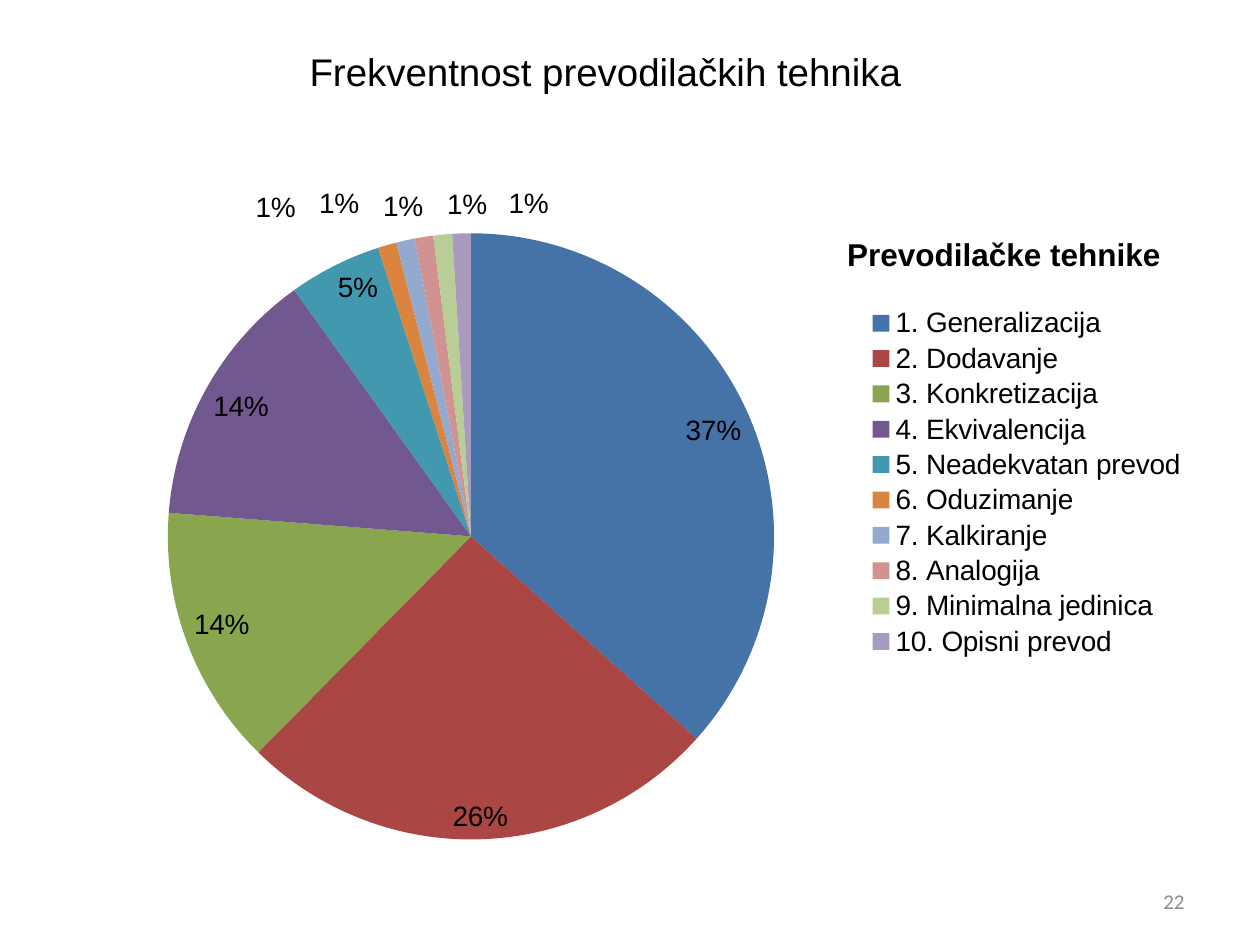
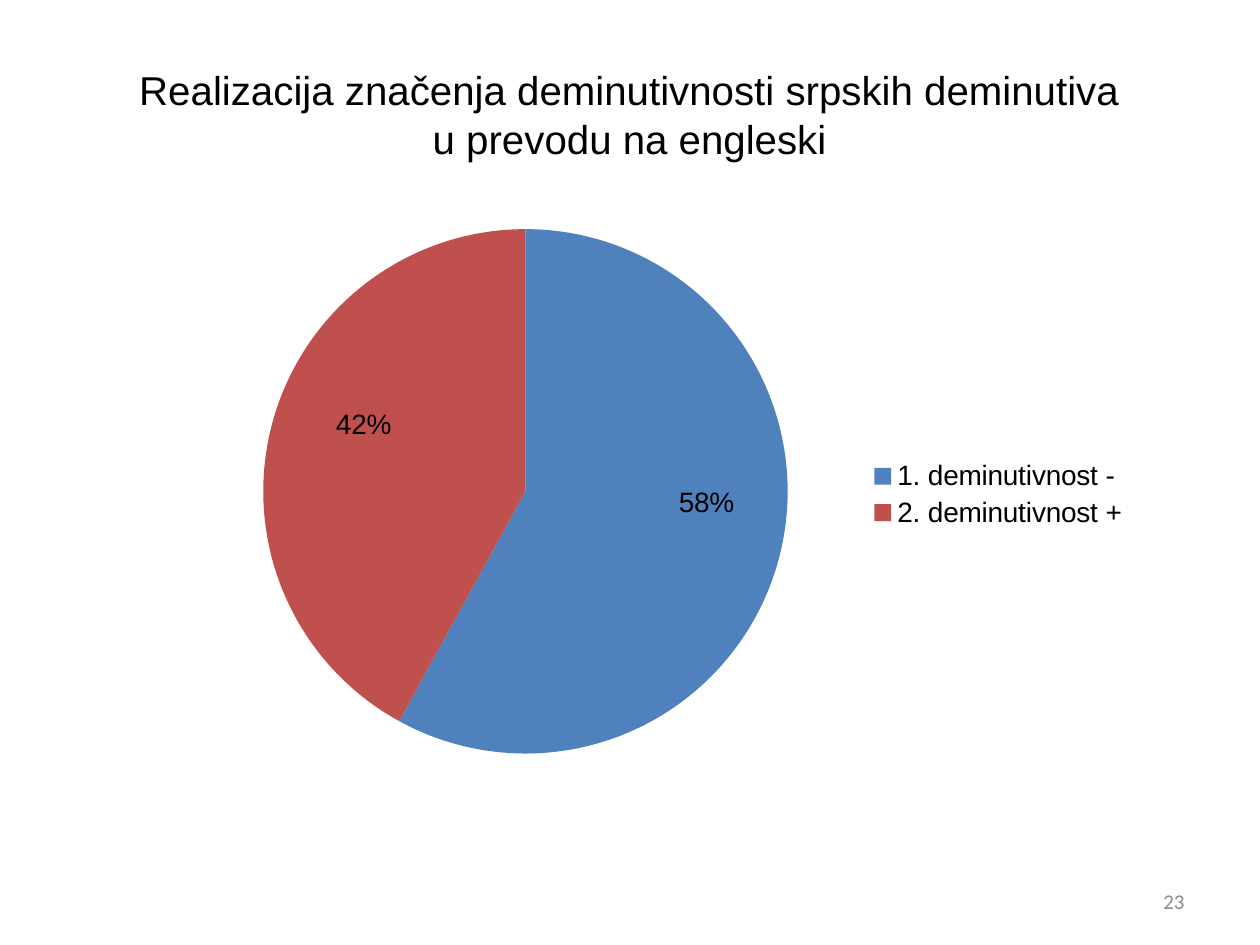
from lxml.etree import SubElement
from pptx import Presentation
from pptx.chart.data import CategoryChartData
from pptx.dml.color import RGBColor
from pptx.enum.chart import XL_CHART_TYPE, XL_LABEL_POSITION as LabelPosition, XL_LEGEND_POSITION
from pptx.enum.text import MSO_ANCHOR, MSO_AUTO_SIZE, PP_ALIGN
from pptx.oxml.ns import qn
from pptx.util import Inches, Pt

# Shared look
BLACK, GREY = "000000", "8C8C8C"
TITLE_FONT, NUMBER_FONT = "Arial", "Calibri"
NUMBER_BOX = (7.17, 6.95, 2.33, 0.4)
INSIDE, OUTSIDE = LabelPosition.INSIDE_END, LabelPosition.OUTSIDE_END

# Each slice: category, value, colour, label position, label offset
TECHNIQUES = [
    ("1. Generalizacija", 37, "4572A7", INSIDE, (0, 0)),
    ("2. Dodavanje", 26, "AA4643", INSIDE, (0, 0)),
    ("3. Konkretizacija", 14, "89A54E", INSIDE, (0, 0)),
    ("4. Ekvivalencija", 14, "71588F", INSIDE, (0, 0)),
    ("5. Neadekvatan prevod", 5, "4198AF", INSIDE, (0, 0)),
    ("6. Oduzimanje", 1, "DB843D", OUTSIDE, (-0.08, -0.02)),
    ("7. Kalkiranje", 1, "93A9CF", OUTSIDE, (-0.04, -0.02)),
    ("8. Analogija", 1, "D19392", OUTSIDE, (0, -0.01)),
    ("9. Minimalna jedinica", 1, "B9CD96", OUTSIDE, (0.04, -0.01)),
    ("10. Opisni prevod", 1, "A99BBD", OUTSIDE, (0.06, -0.01)),
]
DIMINUTIVES = [
    ("1. deminutivnost -", 58, "4F81BD", INSIDE, (-0.04, -0.06)),
    ("2. deminutivnost +", 42, "C0504D", INSIDE, (0.06, -0.03)),
]


def color(hex_string):
    return RGBColor.from_string(hex_string)


def set_font(font, name, size, hex_string=BLACK, bold=False):
    for key, value in dict(name=name, size=Pt(size), bold=bold).items():
        setattr(font, key, value)
    font.color.rgb = color(hex_string)


def write_lines(shape, lines, alignment, font_name, size, hex_string, **frame_format):
    frame = shape.text_frame
    frame.text = "\n".join(lines)
    frame_format = dict(word_wrap=True, auto_size=MSO_AUTO_SIZE.NONE) | frame_format
    for key, value in frame_format.items():
        setattr(frame, key, value)
    for paragraph in frame.paragraphs:
        paragraph.alignment = alignment
        set_font(paragraph.runs[0].font, font_name, size, hex_string)


def add_title(slide, box, lines, size, margin_top=0.05):
    title = slide.shapes.title
    for key, value in zip(("left", "top", "width", "height"), box):
        setattr(title, key, Inches(value))
    write_lines(title, lines, PP_ALIGN.CENTER, TITLE_FONT, size, BLACK,
                vertical_anchor=MSO_ANCHOR.TOP, margin_top=Inches(margin_top))


def add_slide_number(slide, number):
    text_box = slide.shapes.add_textbox(*map(Inches, NUMBER_BOX))
    write_lines(text_box, [str(number)], PP_ALIGN.RIGHT, NUMBER_FONT, 12, GREY,
                vertical_anchor=MSO_ANCHOR.MIDDLE)


def place(element, index, **settings):
    """Give a chart part a manual layout, in fractions of the chart."""
    for old_layout in element.findall(qn("c:layout")):
        element.remove(old_layout)
    layout = SubElement(element, qn("c:layout"))
    manual = SubElement(layout, qn("c:manualLayout"))
    for key, value in settings.items():
        SubElement(manual, qn(f"c:{key}")).set("val", str(value))
    element.insert(index, layout)


def place_box(element, index, box, **target):
    place(element, index, **target, xMode="edge", yMode="edge", **dict(zip("xywh", box)))


def format_slices(plot, slices):
    series = plot.series[0]
    labels = series.data_labels
    for key, value in dict(show_percentage=True, show_value=False).items():
        setattr(labels, key, value)
    set_font(labels.font, TITLE_FONT, 16)
    for leader_lines in series._element.iter(qn("c:showLeaderLines")):
        leader_lines.set("val", "0")
    for index, (_, _, fill, position, (x, y)) in enumerate(slices):
        point = series.points[index]
        point.format.fill.solid()
        point.format.fill.fore_color.rgb = color(fill)
        point.data_label.position = position
        set_font(point.data_label.font, TITLE_FONT, 16)
    # Labels show the share, shifted from their usual place
    for label, (*_, (x, y)) in zip(series._element.iter(qn("c:dLbl")), slices):
        label.find(qn("c:showVal")).set("val", "0")
        label.find(qn("c:showPercent")).set("val", "1")
        if x or y:
            place(label, 1, x=x, y=y)


def add_pie(slide, box, slices, pie_box, legend_box, heading=None, heading_box=None):
    data = CategoryChartData()
    data.categories = [item[0] for item in slices]
    data.add_series("Series 1", [item[1] for item in slices])
    chart = slide.shapes.add_chart(XL_CHART_TYPE.PIE, *map(Inches, box), data).chart
    set_font(chart.font, TITLE_FONT, 16)
    plot = chart.plots[0]
    plot.vary_by_categories = True
    format_slices(plot, slices)
    place_box(chart._chartSpace.find(".//" + qn("c:plotArea")), 0, pie_box,
              layoutTarget="inner")

    # Legend
    chart.has_legend = True
    legend = chart.legend
    legend.position = XL_LEGEND_POSITION.RIGHT
    legend.include_in_layout = False
    set_font(legend.font, TITLE_FONT, 16)
    place_box(legend._element, 1, legend_box)

    # Heading above the legend
    chart.has_title = bool(heading)
    if heading:
        frame = chart.chart_title.text_frame
        frame.text = heading
        set_font(frame.paragraphs[0].runs[0].font, TITLE_FONT, 18, bold=True)
        place_box(chart.chart_title._element, 1, heading_box)


def add_slide(presentation, number):
    slide = presentation.slides.add_slide(presentation.slide_layouts.get_by_name("Title Only"))
    add_slide_number(slide, number)
    return slide


def build_techniques(presentation):
    slide = add_slide(presentation, 22)
    add_title(slide, (0, 0, 9.61, 1.51), ["Frekventnost prevodilačkih tehnika"], 22,
              margin_top=0.38)
    add_pie(slide, (0.62, 0.86, 8.91, 5.94), TECHNIQUES,
            pie_box=(0.08, 0.167, 0.54, 0.81), legend_box=(0.7, 0.26, 0.29, 0.48),
            heading="Prevodilačke tehnike", heading_box=(0.68, 0.16))


def build_diminutives(presentation):
    slide = add_slide(presentation, 23)
    add_title(slide, (0, 0.47, 10, 0.88),
              ["Realizacija značenja deminutivnosti srpskih deminutiva",
               "u prevodu na engleski"], 23)
    add_pie(slide, (1.48, 1.48, 7.58, 4.84), DIMINUTIVES,
            pie_box=(0.08, 0.07, 0.55, 0.86), legend_box=(0.71, 0.44, 0.28, 0.13))


def main():
    presentation = Presentation()
    presentation.slide_width, presentation.slide_height = Inches(10), Inches(7.5)
    build_techniques(presentation)
    build_diminutives(presentation)
    presentation.save("out.pptx")


if __name__ == "__main__":
    main()
